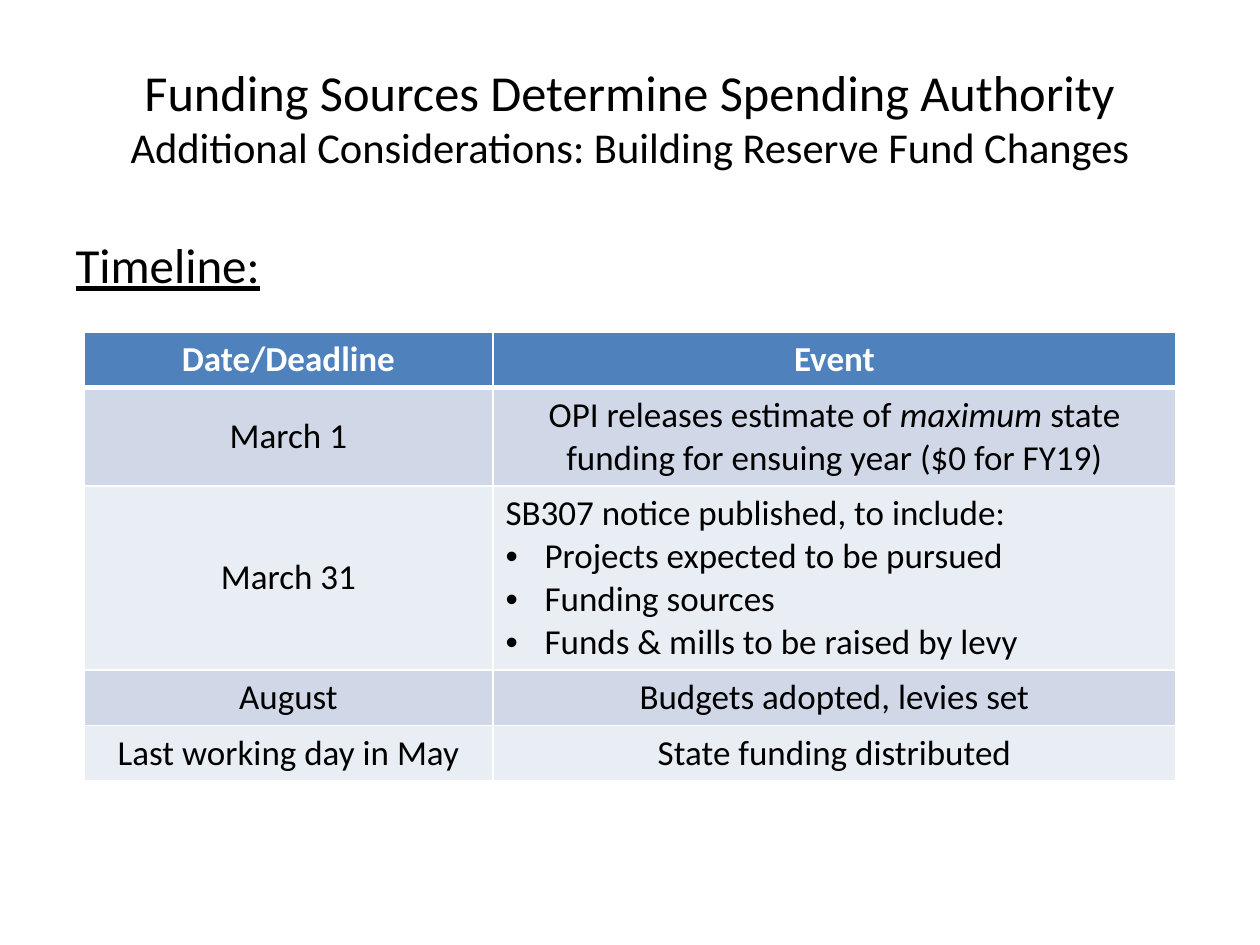
from lxml import etree
from pptx import Presentation
from pptx.dml.color import RGBColor
from pptx.enum.text import MSO_ANCHOR, MSO_AUTO_SIZE, PP_ALIGN
from pptx.oxml.ns import qn
from pptx.util import Pt

PX = 914400 / 126
CENTER, LEFT = PP_ALIGN.CENTER, PP_ALIGN.LEFT
MIDDLE, TOP = MSO_ANCHOR.MIDDLE, MSO_ANCHOR.TOP
NO_AUTOFIT = MSO_AUTO_SIZE.NONE

BLACK, WHITE = "000000", "FFFFFF"
HEADER_FILL = "4F81BD"
BAND_FILLS = ("D0D8E8", "E9EDF4")
HANGING_INDENT = 39
COLUMN_WIDTHS = (409, 683)
ROW_HEIGHTS = (55, 98, 184, 55, 55)

TITLE_LINES = (
    ("Funding Sources Determine Spending Authority", 28.8),
    ("Additional Considerations: Building Reserve Fund Changes", 24.3),
)
# A cell holds paragraphs, and a paragraph holds (text, italic) runs.
NOTICE_INTRO = "SB307 notice published, to include:"
NOTICE_ITEMS = (
    "Projects expected to be pursued",
    "Funding sources",
    "Funds & mills to be raised by levy",
)
ESTIMATE = (
    ("OPI releases estimate of ", False),
    ("maximum ", True),
    ("state funding for ensuing year ($0 for FY19)", False),
)
TIMELINE = (
    ("Date/Deadline", "Event"),
    ("March 1", ESTIMATE),
    ("March 31", None),
    ("August", "Budgets adopted, levies set"),
    ("Last working day in May", "State funding distributed"),
)


def emu(px):
    return round(px * PX)


def rgb(hex_colour):
    return RGBColor.from_string(hex_colour)


def add_run(paragraph, text, size, colour=BLACK, **formats):
    run = paragraph.add_run()
    run.text = text
    run.font.color.rgb = rgb(colour)
    values = {"name": "Calibri", "size": Pt(size), **formats}
    for attribute, value in values.items():
        setattr(run.font, attribute, value)


def set_bullet(paragraph, char=None, indent=0):
    """Give the paragraph a hanging bullet, or none when char is missing."""
    properties = paragraph._p.get_or_add_pPr()
    properties.set("marL", str(emu(indent)))
    properties.set("indent", str(-emu(indent)))
    if char:
        font = etree.SubElement(properties, qn("a:buFont"))
        font.set("typeface", "Arial")
        etree.SubElement(properties, qn("a:buChar")).set("char", char)
    else:
        etree.SubElement(properties, qn("a:buNone"))


def place(placeholder, box, anchor):
    for attribute, px in zip(("left", "top", "width", "height"), box):
        setattr(placeholder, attribute, emu(px))
    frame = placeholder.text_frame
    frame.auto_size = NO_AUTOFIT
    frame.word_wrap = True
    frame.vertical_anchor = anchor
    return frame.paragraphs[0]


def fill_title(placeholder, box):
    paragraph = place(placeholder, box, MIDDLE)
    paragraph.alignment = CENTER
    for index, (text, size) in enumerate(TITLE_LINES):
        if index:
            paragraph.add_line_break()
        add_run(paragraph, text, size)


def fill_heading(placeholder, box):
    paragraph = place(placeholder, box, TOP)
    paragraph.line_spacing = 1.14
    set_bullet(paragraph)
    add_run(paragraph, "Timeline:", 28, underline=True)


def set_borders(cell, widths):
    properties = cell._tc.get_or_add_tcPr()
    for side, width in zip("LRTB", widths):
        line = etree.SubElement(properties, qn(f"a:ln{side}"))
        line.set("w", str(Pt(width)))
        fill = etree.SubElement(line, qn("a:solidFill"))
        etree.SubElement(fill, qn("a:srgbClr")).set("val", WHITE)


def fill_notice(frame):
    intro = frame.paragraphs[0]
    intro.alignment = LEFT
    add_run(intro, NOTICE_INTRO, 20, bold=False)
    for item in NOTICE_ITEMS:
        paragraph = frame.add_paragraph()
        paragraph.alignment = LEFT
        set_bullet(paragraph, "•", HANGING_INDENT)
        add_run(paragraph, item, 20, bold=False)


def fill_cell(cell, content, row):
    is_header = row == 0
    set_borders(cell, (1, 1, 3 if row == 1 else 1, 3 if is_header else 1))
    cell.fill.solid()
    cell.fill.fore_color.rgb = rgb(
        HEADER_FILL if is_header else BAND_FILLS[(row - 1) % 2])
    cell.vertical_anchor = MIDDLE
    if content is None:
        fill_notice(cell.text_frame)
        return
    paragraph = cell.text_frame.paragraphs[0]
    paragraph.alignment = CENTER
    runs = ((content, False),) if isinstance(content, str) else content
    for text, italic in runs:
        add_run(paragraph, text, 20, WHITE if is_header else BLACK,
                bold=is_header, italic=italic)


def add_timeline(slide, left, top):
    table = slide.shapes.add_table(
        len(ROW_HEIGHTS), len(COLUMN_WIDTHS), emu(left), emu(top),
        emu(sum(COLUMN_WIDTHS)), emu(sum(ROW_HEIGHTS))).table
    table.horz_banding = False
    for column, width in zip(table.columns, COLUMN_WIDTHS):
        column.width = emu(width)
    for row, (height, contents) in enumerate(zip(ROW_HEIGHTS, TIMELINE)):
        table.rows[row].height = emu(height)
        for column, content in enumerate(contents):
            fill_cell(table.cell(row, column), content, row)


def main():
    presentation = Presentation()
    presentation.slide_width = emu(1260)
    presentation.slide_height = emu(945)
    slide = presentation.slides.add_slide(presentation.slide_layouts[1])
    fill_title(slide.shapes.title, (63, 38, 1134, 157))
    fill_heading(slide.placeholders[1], (63, 220, 1134, 624))
    add_timeline(slide, 84, 332)
    presentation.save("out.pptx")


if __name__ == "__main__":
    main()
